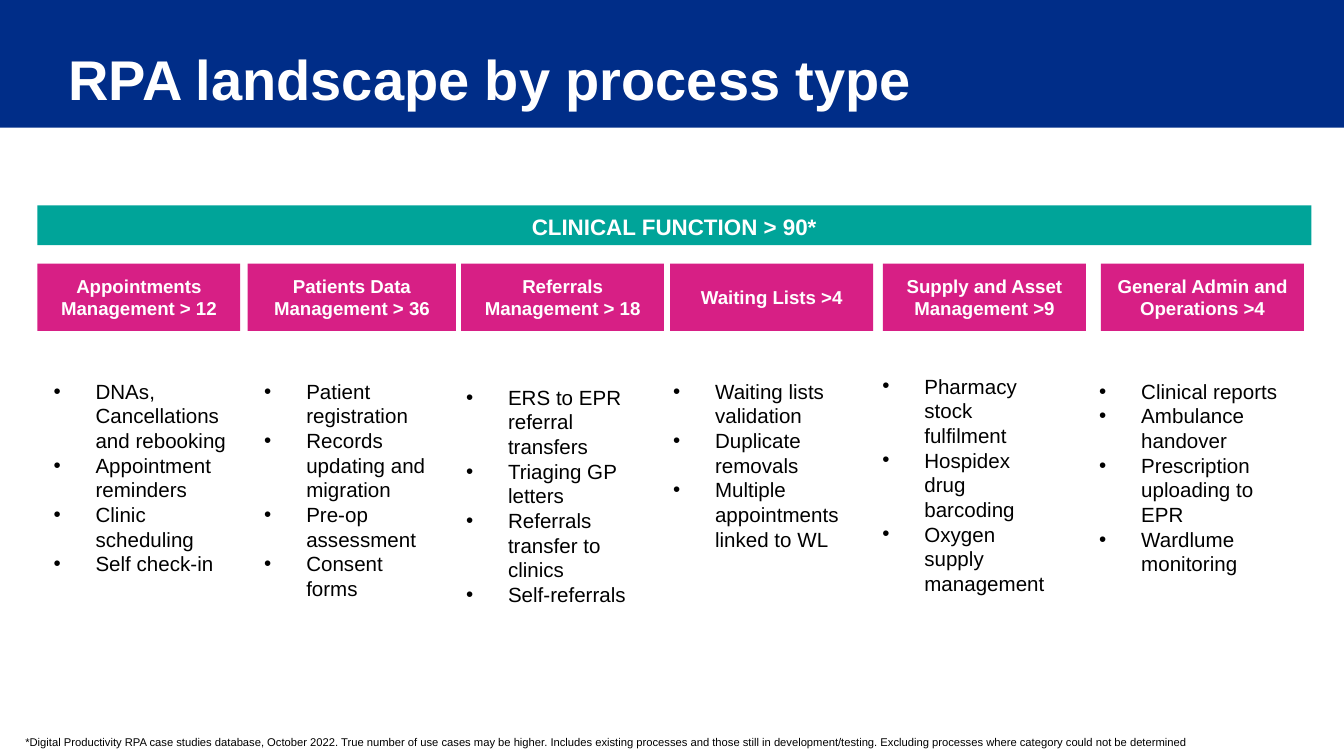
import pptx
import pptx.util
import pptx.dml.color
import pptx.enum.shapes
import pptx.enum.text
import pptx.oxml.ns
from lxml import etree

Pt = pptx.util.Pt
ALIGN = pptx.enum.text.PP_ALIGN
ANCHOR = pptx.enum.text.MSO_ANCHOR
COLOURS = {
    "navy": "002D88",
    "teal": "00A499",
    "pink": "D71F85",
    "white": "FFFFFF",
    "black": "000000",
}
FONT = "Arial"
INDENT = 22.5

HEADER_TOP, HEADER_HEIGHT = 141.3, 36
LIST_HEIGHT = 180

COLUMNS = [
    {"header": (20, 108.7), "list": (21.6, 199.4, 108.7),
     "name": "Appointments Management > 12",
     "items": ["DNAs, Cancellations and rebooking", "Appointment reminders",
               "Clinic scheduling", "Self check-in"]},
    {"header": (132.7, 111.6), "list": (134.5, 199.4, 108),
     "name": "Patients Data Management > 36",
     "items": ["Patient registration", "Records updating and migration",
               "Pre-op assessment", "Consent forms"]},
    {"header": (247, 108.7), "list": (242.6, 202.6, 108),
     "name": "Referrals Management > 18",
     "items": ["ERS to EPR referral transfers", "Triaging GP letters",
               "Referrals transfer to clinics", "Self-referrals"]},
    {"header": (359, 108.7), "list": (353.5, 199.4, 108),
     "name": "Waiting Lists >4",
     "items": ["Waiting lists validation", "Duplicate removals",
               "Multiple appointments linked to WL"]},
    {"header": (473, 108.7), "list": (465.6, 196.6, 107.3),
     "name": "Supply and Asset Management >9",
     "items": ["Pharmacy stock fulfilment", "Hospidex drug barcoding",
               "Oxygen supply management"]},
    {"header": (589.8, 108.7), "list": (581.8, 199.4, 113),
     "name": "General Admin and Operations >4",
     "items": ["Clinical reports", "Ambulance handover",
               "Prescription uploading to EPR", "Wardlume monitoring"]},
]


def colour(name):
    return pptx.dml.color.RGBColor.from_string(COLOURS[name])


def add_span(para, text, size, tint, bold=False):
    span = para.add_run()
    span.text = text
    span.font.name = FONT
    span.font.size = Pt(size)
    span.font.bold = bold
    span.font.color.rgb = colour(tint)


def set_frame(shape, insets, anchor):
    frame = shape.text_frame
    frame.word_wrap = True
    frame.vertical_anchor = anchor
    left, top, right, bottom = insets
    frame.margin_left, frame.margin_top = Pt(left), Pt(top)
    frame.margin_right, frame.margin_bottom = Pt(right), Pt(bottom)
    return frame


def add_block(page, box, fill):
    block = page.shapes.add_shape(
        pptx.enum.shapes.MSO_SHAPE.RECTANGLE, *[Pt(length) for length in box])
    block.shadow.inherit = False
    block.fill.solid()
    block.fill.fore_color.rgb = colour(fill)
    block.line.fill.background()
    return block


def add_label(page, box, fill, text, size, inset, anchor):
    block = add_block(page, box, fill)
    para = set_frame(block, [inset] * 4, anchor).paragraphs[0]
    para.alignment = ALIGN.CENTER
    add_span(para, text, size, "white", True)


def add_text(page, box, text, size, tint, insets, anchor, bold=False):
    text_box = page.shapes.add_textbox(*[Pt(length) for length in box])
    para = set_frame(text_box, insets, anchor).paragraphs[0]
    add_span(para, text, size, tint, bold)


def add_bullet(para):
    properties = para._p.get_or_add_pPr()
    properties.set("marL", str(Pt(INDENT)))
    properties.set("indent", str(-Pt(INDENT)))
    qn = pptx.oxml.ns.qn
    tint = etree.SubElement(properties, qn("a:buClr"))
    etree.SubElement(tint, qn("a:srgbClr")).set("val", COLOURS["black"])
    etree.SubElement(properties, qn("a:buFont")).set("typeface", FONT)
    etree.SubElement(properties, qn("a:buChar")).set("char", "•")


def add_list(page, box, items):
    text_box = page.shapes.add_textbox(*[Pt(length) for length in box])
    frame = set_frame(text_box, (7.2, 3.6, 7.2, 3.6), ANCHOR.TOP)
    for index, item in enumerate(items):
        para = frame.add_paragraph() if index else frame.paragraphs[0]
        add_bullet(para)
        add_span(para, item, 11, "black")


def add_column(page, column):
    left, width = column["header"]
    add_label(page, (left, HEADER_TOP, width, HEADER_HEIGHT), "pink",
              column["name"], 10, 7.2, ANCHOR.MIDDLE)
    add_list(page, (*column["list"], LIST_HEIGHT), column["items"])


def build_slide(deck):
    page = deck.slides.add_slide(deck.slide_layouts[6])
    page.background.fill.solid()
    page.background.fill.fore_color.rgb = colour("navy")
    add_block(page, (0, 68.4, 720, 336.6), "white")
    add_text(page, (36.7, 20.9, 601, 41.8), "RPA landscape by process type",
             30, "white", (0, 0, 0, 0), ANCHOR.MIDDLE, True)
    add_label(page, (20, 110, 682.5, 21.4), "teal",
              "CLINICAL FUNCTION > 90*", 12, 4.3, ANCHOR.TOP)
    for column in COLUMNS:
        add_column(page, column)
    add_text(page, (6.5, 386.6, 659.5, 18),
             "*Digital Productivity RPA case studies database, October 2022. "
             "True number of use cases may be higher. Includes existing processes "
             "and those still in development/testing. Excluding processes where "
             "category could not be determined",
             6, "black", (7.2, 7.2, 7.2, 0), ANCHOR.TOP)


def main():
    deck = pptx.Presentation()
    deck.slide_width, deck.slide_height = Pt(720), Pt(405)
    build_slide(deck)
    deck.save("out.pptx")


if __name__ == "__main__":
    main()
